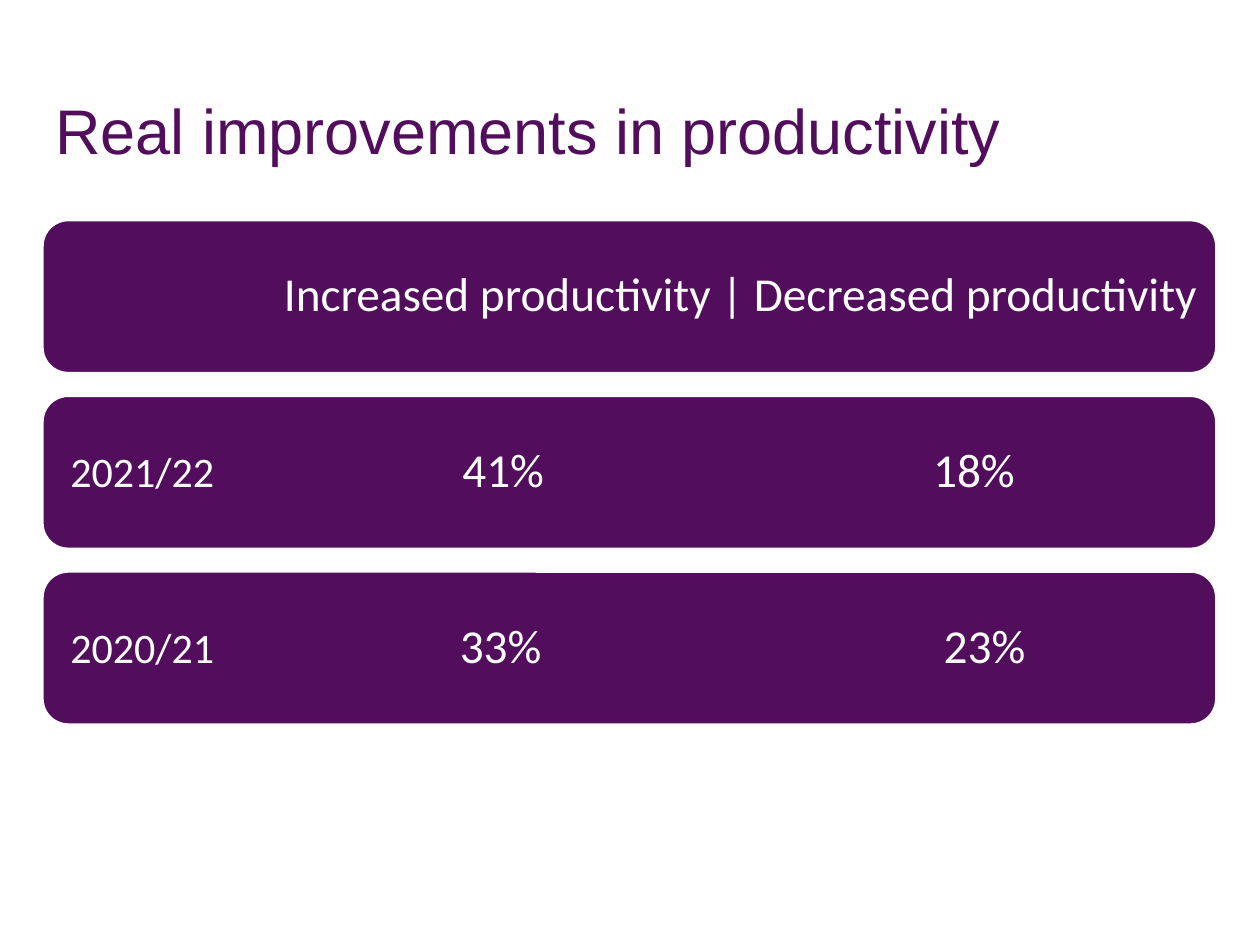
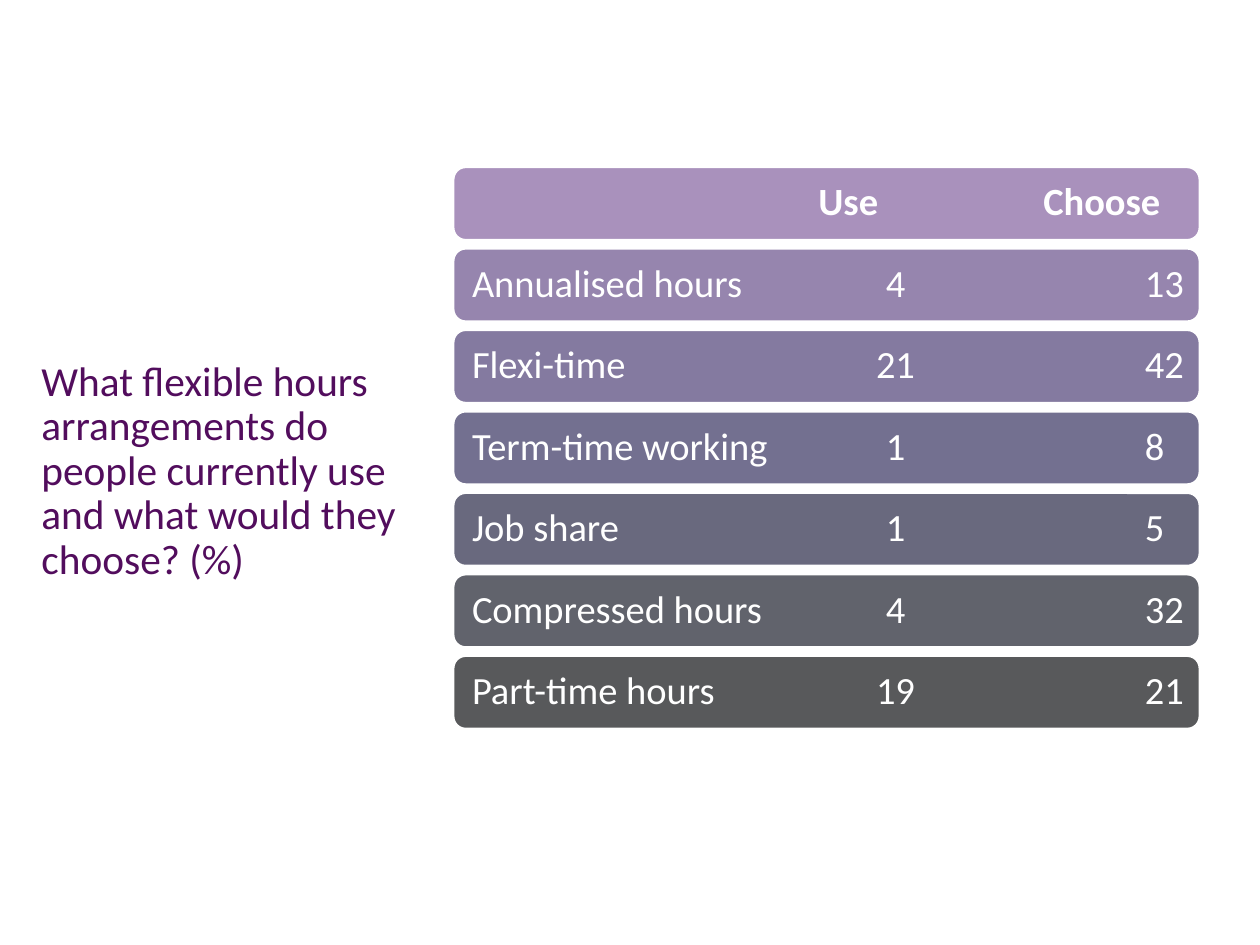
from lxml import etree
from pptx import Presentation
from pptx import util as u
from pptx.dml.color import RGBColor
from pptx.enum import shapes, text
from pptx.oxml import ns

Pt = u.Pt
COLOURS = {
    "purple": "520D5D",
    "white": "FFFFFF",
    "header": "A991BC",
    "annualised": "9685AE",
    "flexi": "847AA0",
    "term": "737090",
    "share": "69697E",
    "compressed": "61636C",
    "part": "58595B",
}
LINE_SPACING = 0.9


def rgb(name):
    return RGBColor.from_string(COLOURS[name])


def add_run(p, content, size, colour="white", font="Calibri", bold=False):
    r = p.add_run()
    r.text = content
    r.font.size = Pt(size)
    r.font.name = font
    r.font.bold = bold
    r.font.color.rgb = rgb(colour)


def set_tabs(p, stops):
    """Set tab stops from (position in points, "l" or "ctr") pairs."""
    tab_list = etree.SubElement(p._p.get_or_add_pPr(), ns.qn("a:tabLst"))
    for position, align in stops:
        etree.SubElement(tab_list, ns.qn("a:tab"), pos=str(Pt(position)), algn=align)


class Deck:
    def __init__(self):
        self.prs = Presentation()
        self.prs.slide_width, self.prs.slide_height = Pt(720), Pt(540)
        self.s = None

    def new_slide(self):
        self.s = self.prs.slides.add_slide(self.prs.slide_layouts[6])

    def first_paragraph(self, sp):
        tf = sp.text_frame
        tf.word_wrap = True
        tf.vertical_anchor = text.MSO_ANCHOR.MIDDLE
        p = tf.paragraphs[0]
        p.alignment = text.PP_ALIGN.LEFT
        p.line_spacing = LINE_SPACING
        return p

    def title(self, content, box, **style):
        sp = self.s.shapes.add_textbox(*map(Pt, box))
        add_run(self.first_paragraph(sp), content, colour="purple", **style)

    def bar(self, box, fill, inset, stops, runs):
        """Draw a rounded bar with tabbed text; runs holds (text, style) pairs."""
        sp = self.s.shapes.add_shape(
            shapes.MSO_SHAPE.ROUNDED_RECTANGLE, *map(Pt, box))
        sp.shadow.inherit = False
        sp.fill.solid()
        sp.fill.fore_color.rgb = rgb(fill)
        sp.line.color.rgb = rgb("white")
        sp.line.width = Pt(1)
        tf = sp.text_frame
        tf.margin_left, tf.margin_right = Pt(inset), Pt(4)
        tf.margin_top = tf.margin_bottom = 0
        p = self.first_paragraph(sp)
        set_tabs(p, stops)
        for content, style in runs:
            add_run(p, content, **style)


def productivity_slide(deck):
    deck.new_slide()
    deck.title("Real improvements in productivity", (24.5, 28, 620.6, 97.2),
               size=36, font="Arial")
    left, top, width, height, pitch = 24.5, 126, 670.3, 87, 100.4
    rows = [
        ("", "\tIncreased productivity | Decreased productivity", [122]),
        ("2021/22", "\t41%\t18%", [224, 493]),
        ("2020/21", "\t33%\t23%", [222.5, 499]),
    ]
    for i, (year, figures, positions) in enumerate(rows):
        runs = [(year, {"size": 24})] if year else []
        runs.append((figures, {"size": 27}))
        deck.bar((left, top + i * pitch, width, height), "purple", 11.5,
                 [(position, "l") for position in positions], runs)


def flexible_hours_slide(deck):
    deck.new_slide()
    deck.title("What flexible hours arrangements do people currently use "
               "and what would they choose? (%)",
               (16.6, 171.4, 228.2, 196.6), size=23.6)
    left, top, width, height, pitch = 259.2, 95.6, 426.2, 41.4, 46.55
    header_stops = [(215, "ctr"), (326.5, "l")]
    value_stops = [(242, "ctr"), (384.5, "l")]
    rows = [
        ("header", "", "Use", "Choose"),
        ("annualised", "Annualised hours", "4", "13"),
        ("flexi", "Flexi-time", "21", "42"),
        ("term", "Term-time working", "1", "8"),
        ("share", "Job share", "1", "5"),
        ("compressed", "Compressed hours", "4", "32"),
        ("part", "Part-time hours", "19", "21"),
    ]
    for i, (fill, *cells) in enumerate(rows):
        is_header = i == 0
        deck.bar((left, top + i * pitch, width, height), fill, 8.5,
                 header_stops if is_header else value_stops,
                 [("\t".join(cells), {"size": 22, "bold": is_header})])


def main():
    deck = Deck()
    productivity_slide(deck)
    flexible_hours_slide(deck)
    deck.prs.save("out.pptx")


if __name__ == "__main__":
    main()
